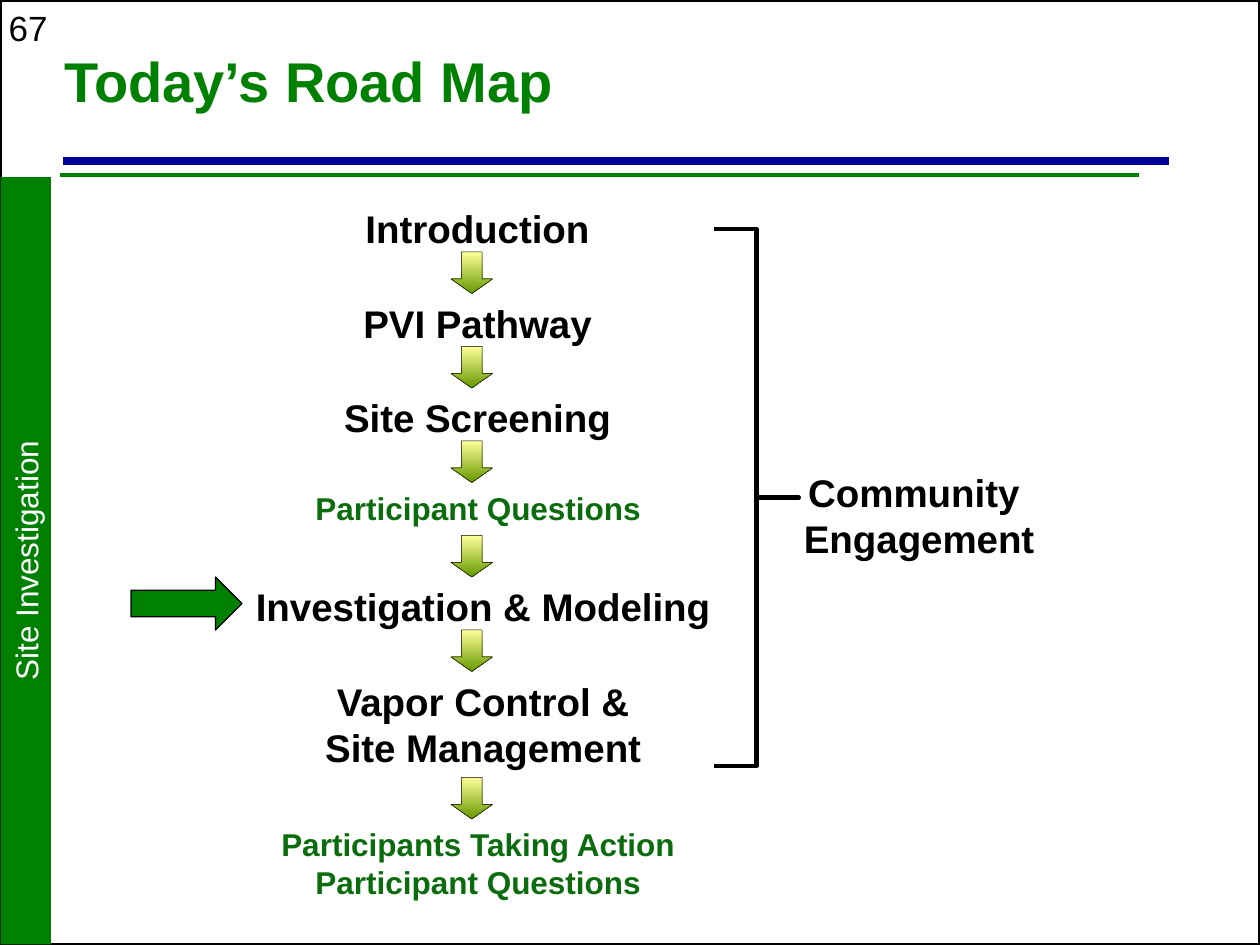
from lxml.etree import SubElement
from pptx import Presentation
from pptx.dml.color import RGBColor
from pptx.enum.shapes import MSO_CONNECTOR, MSO_SHAPE as SHAPE
from pptx.enum.text import MSO_ANCHOR as ANCHOR, PP_ALIGN as ALIGN
from pptx.oxml.ns import qn
from pptx.util import Inches, Pt

TITLE = "Today’s Road Map"
PAGE = "67"
SECTION = "Site Investigation"
TOPIC = ["Community ", "Engagement"]
STEPS = [
    ("topic", ["Introduction"]),
    ("topic", ["PVI Pathway"]),
    ("topic", ["Site Screening"]),
    ("pause", ["Participant Questions"]),
    ("current", ["Investigation & Modeling"]),
    ("current", ["Vapor Control &", "Site Management"]),
    ("pause", ["Participants Taking Action", "Participant Questions"]),
]
COLORS = {
    "black": "000000", "white": "FFFFFF", "blue": "000099", "green": "008000",
    "dark": "0A6C0C", "pale": "FFFF99", "olive": "669900",
}
STYLES = {
    "topic": (1.83, 3.92, 22, "black"),
    "current": (1.92, 3.83, 22, "black"),
    "pause": (1.92, 3.75, 18, "dark"),
}
RULES = [(0.5, 9.28, 1.28, "blue", 4.5), (0.48, 9.04, 1.39, "green", 2)]
WIDTH, HEIGHT = 10, 7.5
TOP, LINE, ARROW, ARROW_X = 1.58, 0.42, 0.33, 3.58


def rgb(name):
    return RGBColor.from_string(COLORS[name])


def write(tf, lines, size, color, bold=True, align=ALIGN.CENTER):
    tf.word_wrap = True
    for i, line in enumerate(lines):
        p = tf.paragraphs[0] if i == 0 else tf.add_paragraph()
        p.alignment = align
        r = p.add_run()
        r.text = line
        r.font.name, r.font.size, r.font.bold = "Arial", Pt(size), bold
        r.font.color.rgb = rgb(color)


def add_text(s, x, y, w, h, *args, **kwargs):
    tb = s.shapes.add_textbox(Inches(x), Inches(y), Inches(w), Inches(h))
    write(tb.text_frame, *args, **kwargs)


def add_shape(s, kind, x, y, w, h, fill=None, line=None, weight=1, adj=()):
    sp = s.shapes.add_shape(kind, Inches(x), Inches(y), Inches(w), Inches(h))
    sp.shadow.inherit = False
    for i, value in enumerate(adj):
        sp.adjustments[i] = value
    if fill:
        sp.fill.solid()
        sp.fill.fore_color.rgb = rgb(fill)
    else:
        sp.fill.background()
    if line:
        sp.line.color.rgb = rgb(line)
        sp.line.width = Pt(weight)
    else:
        sp.line.fill.background()
    return sp


def add_rule(s, x1, x2, y, color, weight):
    c = s.shapes.add_connector(
        MSO_CONNECTOR.STRAIGHT, Inches(x1), Inches(y), Inches(x2), Inches(y))
    c.line.color.rgb = rgb(color)
    c.line.width = Pt(weight)
    SubElement(c._element.spPr, qn("a:effectLst"))


def add_down_arrow(s, y):
    sp = add_shape(s, SHAPE.DOWN_ARROW, ARROW_X, y, ARROW, ARROW,
                   line="black", weight=0.25, adj=(0.5, 0.35))
    sp.fill.gradient()
    sp.fill.gradient_angle = 270
    for stop, color, position in zip(sp.fill.gradient_stops, ("pale", "olive"), (0, 1)):
        stop.color.rgb = rgb(color)
        stop.position = position


def add_steps(s):
    y = TOP
    for i, (style, lines) in enumerate(STEPS):
        x, w, size, color = STYLES[style]
        h = LINE * len(lines)
        add_text(s, x, y, w, h, lines, size, color)
        if i < len(STEPS) - 1:
            add_down_arrow(s, y + h)
        y += h + ARROW


def main():
    prs = Presentation()
    prs.slide_width, prs.slide_height = Inches(WIDTH), Inches(HEIGHT)
    s = prs.slides.add_slide(prs.slide_layouts[5])

    title = s.shapes.title
    title.left, title.top = Inches(0.41), Inches(0.1)
    title.width, title.height = Inches(8.3), Inches(1.15)
    tf = title.text_frame
    tf.vertical_anchor = ANCHOR.MIDDLE
    write(tf, [TITLE], 32, "green", align=ALIGN.LEFT)
    tf.paragraphs[0].line_spacing = 0.85

    for rule in RULES:
        add_rule(s, *rule)
    add_text(s, -0.03, 0, 0.54, 0.43, [PAGE], 20, "black", bold=False, align=ALIGN.LEFT)
    add_shape(s, SHAPE.RECTANGLE, 0, 0, WIDTH, HEIGHT, line="black", weight=2)

    add_steps(s)
    add_shape(s, SHAPE.RIGHT_BRACE, 5.67, 1.82, 0.67, 4.26,
              line="black", weight=2.5, adj=(0, 0.5))
    add_text(s, 6.17, 3.67, 2.25, 2 * LINE, TOPIC, 22, "black")
    add_shape(s, SHAPE.RIGHT_ARROW, 1.04, 4.58, 0.88, 0.42,
              fill="green", line="black", weight=0.75)

    bar = add_shape(s, SHAPE.RECTANGLE, -2.84, 4.25, 6.09, 0.4, fill="green")
    bar.rotation = 270
    bar.text_frame.vertical_anchor = ANCHOR.TOP
    write(bar.text_frame, [SECTION], 18, "white", bold=False)

    prs.save("out.pptx")


if __name__ == "__main__":
    main()
